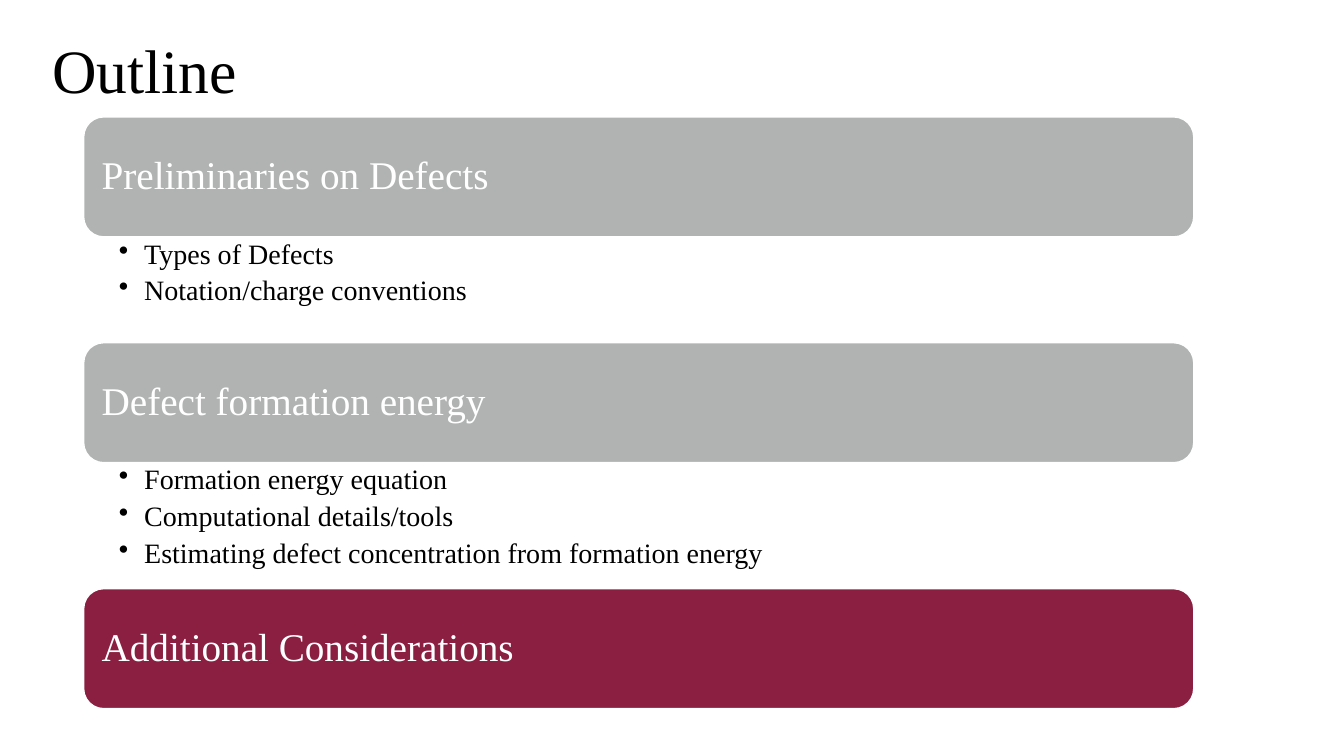
from pptx import Presentation
from pptx.dml.color import RGBColor
from pptx.enum.shapes import MSO_SHAPE
from pptx.enum.text import MSO_ANCHOR, PP_ALIGN
from pptx.oxml.ns import qn
from pptx.util import Inches, Pt
from lxml import etree

TITLE = "Outline"
GREY, MAROON, WHITE, BLACK = "B1B3B3", "8B1F41", "FFFFFF", "000000"
# heading, fill, bullet points, height of the bullet area
SECTIONS = [
    ("Preliminaries on Defects", GREY,
     ["Types of Defects", "Notation/charge conventions"], 1.05),
    ("Defect formation energy", GREY,
     ["Formation energy equation", "Computational details/tools",
      "Estimating defect concentration from formation energy"], 1.25),
    ("Additional Considerations", MAROON, [], 0),
]
LEFT, TOP, WIDTH, BAR_HEIGHT = 0.83, 1.16, 11.01, 1.19


def color(value):
    return RGBColor.from_string(value)


def format_frame(frame, anchor, insets):
    frame.word_wrap = True
    frame.vertical_anchor = anchor
    for side, inset in zip(("left", "top", "right", "bottom"), insets):
        setattr(frame, f"margin_{side}", Inches(inset))


def write(para, text, size, ink):
    para.text = text
    para.alignment = PP_ALIGN.LEFT
    para.line_spacing = 0.9
    font_values = {"name": "Times New Roman", "size": Pt(size)}
    for name, value in font_values.items():
        setattr(para.runs[0].font, name, value)
    para.runs[0].font.color.rgb = color(ink)


def add_bullet(para):
    properties = para._p.get_or_add_pPr()
    properties.set("marL", str(Inches(0.25)))
    properties.set("indent", str(Inches(-0.25)))
    etree.SubElement(properties, qn("a:buChar")).set("char", "•")


def add_bar(page, top, heading, fill):
    bar = page.shapes.add_shape(
        MSO_SHAPE.ROUNDED_RECTANGLE,
        Inches(LEFT), Inches(top), Inches(WIDTH), Inches(BAR_HEIGHT))
    bar.shadow.inherit = False
    bar.fill.solid()
    bar.fill.fore_color.rgb = color(fill)
    bar.line.color.rgb = color(WHITE)
    bar.line.width = Pt(1)
    format_frame(bar.text_frame, MSO_ANCHOR.MIDDLE, [0.12] * 4)
    write(bar.text_frame.paragraphs[0], heading, 28, WHITE)


def add_points(page, top, height, points):
    box = page.shapes.add_textbox(
        Inches(LEFT), Inches(top), Inches(WIDTH), Inches(height))
    frame = box.text_frame
    format_frame(frame, MSO_ANCHOR.TOP, (0.35, 0.03, 0.16, 0.03))
    for index, point in enumerate(points):
        para = frame.add_paragraph() if index else frame.paragraphs[0]
        add_bullet(para)
        write(para, point, 20, BLACK)
        para.space_after = Pt(4.6)


def main():
    deck = Presentation()
    deck.slide_width, deck.slide_height = Inches(13.33), Inches(7.5)
    page = deck.slides.add_slide(deck.slide_layouts[5])

    title = page.shapes.title
    title.left, title.top = Inches(0.42), Inches(0)
    title.width, title.height = Inches(11.5), Inches(1.45)
    format_frame(title.text_frame, MSO_ANCHOR.MIDDLE, (0.1, 0.05, 0.1, 0.05))
    write(title.text_frame.paragraphs[0], TITLE, 44, BLACK)

    top = TOP
    for heading, fill, points, height in SECTIONS:
        add_bar(page, top, heading, fill)
        top += BAR_HEIGHT
        if points:
            add_points(page, top, height, points)
        top += height

    deck.save("out.pptx")


if __name__ == "__main__":
    main()
